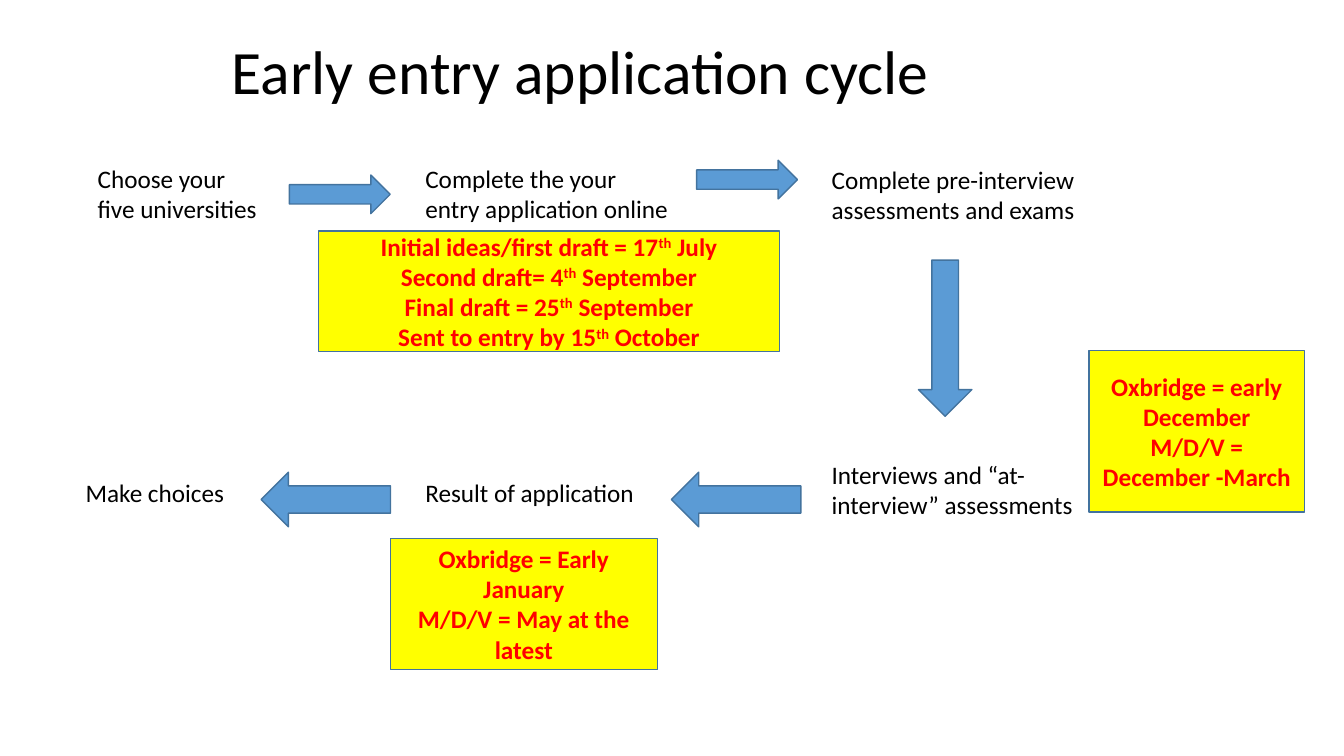
from pptx import Presentation
from pptx.dml.color import RGBColor
from pptx.enum.shapes import MSO_SHAPE
from pptx.enum.text import MSO_ANCHOR, MSO_AUTO_SIZE, PP_ALIGN
from pptx.util import Inches, Pt

CELL = Inches(1) / 12
COLS, ROWS = 160, 90
STEP = {"name": "Calibri", "size": Pt(18), "bold": False}
HEAD = {**STEP, "size": Pt(44)}
NOTE = {**STEP, "bold": True}
MID, LAST = 49.44, 97.8

deck = Presentation()
deck.slide_width, deck.slide_height = Inches(13.33), Inches(7.5)
slide = deck.slides.add_slide(deck.slide_layouts[6])


def paint(color, code):
    color.rgb = RGBColor.from_string(code)


def cells(*spans):
    return [round(span * CELL) for span in spans]


def write(para, text, form, code):
    for spot, part in enumerate(text.split("^")):
        run = para.add_run()
        run.text = part
        for key, value in form.items():
            setattr(run.font, key, value)
        paint(run.font.color, code)
        if spot % 2:
            run.font._element.set("baseline", "30000")


def label(box, text, form=STEP, wrap=True):
    frame = slide.shapes.add_textbox(*cells(*box)).text_frame
    frame.word_wrap = wrap
    frame.auto_size = MSO_AUTO_SIZE.SHAPE_TO_FIT_TEXT
    write(frame.paragraphs[0], text, form, "000000")


def block(kind, box, code):
    shape = slide.shapes.add_shape(kind, *cells(*box))
    shape.shadow.inherit = False
    shape.fill.solid()
    paint(shape.fill.fore_color, code)
    paint(shape.line.color, "43739E")
    shape.line.width = Pt(1)
    return shape


def arrow(kind, box):
    block(kind, box, "5B9BD5")


def note(box, lines):
    frame = block(MSO_SHAPE.RECTANGLE, box, "FFFF00").text_frame
    frame.word_wrap = True
    frame.vertical_anchor = MSO_ANCHOR.MIDDLE
    for spot, line in enumerate(lines):
        para = frame.add_paragraph() if spot else frame.paragraphs[0]
        para.alignment = PP_ALIGN.CENTER
        write(para, line, NOTE, "FF0000")


def apply(left, top, wide, high):
    label((left + 10.44, top, 22.32, high), "Choose your five universities")
    label((left + MID, top, 31.8, high),
          "Complete the your entry application online")
    label((left + LAST, top + 0.1, 36.36, high),
          "Complete pre-interview assessments and exams")
    for across, down in ((34.44, 2), (82.92, 0.24)):
        arrow(MSO_SHAPE.RIGHT_ARROW, (left + across, top + down, 12, 4.6))
    note((left + 37.92, top + 8.64, 54.84, 14.4),
         ["Initial ideas/first draft = 17^th^ July",
          "Second draft= 4^th^ September",
          "Final draft = 25^th^ September",
          "Sent to entry by 15^th^ October"])


def decide(left, top, wide, high):
    label((left + LAST, top, 36.36, high),
          "Interviews and “at-interview” assessments")
    label((left + MID, top + 2.16, 27.6, 4.8), "Result of application", wrap=False)
    label((left + 9, top + 2.16, 19.08, 4.8), "Make choices", wrap=False)
    for across in (79.92, 31.08):
        arrow(MSO_SHAPE.LEFT_ARROW, (left + across, top + 2.1, 15.4, 6.5))
    note((left + 129.6, top - 12.36, 25.68, 19.2),
         ["Oxbridge = early December", "M/D/V = December -March"])
    note((left + 46.44, top + 9.96, 31.8, 15.6),
         ["Oxbridge = Early January", "M/D/V = May at the latest"])


label((26.4, 3.36, 86.28, 10.1), "Early entry application cycle", HEAD, False)
apply(0, 18.84, COLS, 8.52)
arrow(MSO_SHAPE.DOWN_ARROW, (109.32, 30.96, 6.36, 18.6))
decide(0, 54.12, COLS, 8.52)
deck.save("out.pptx")
